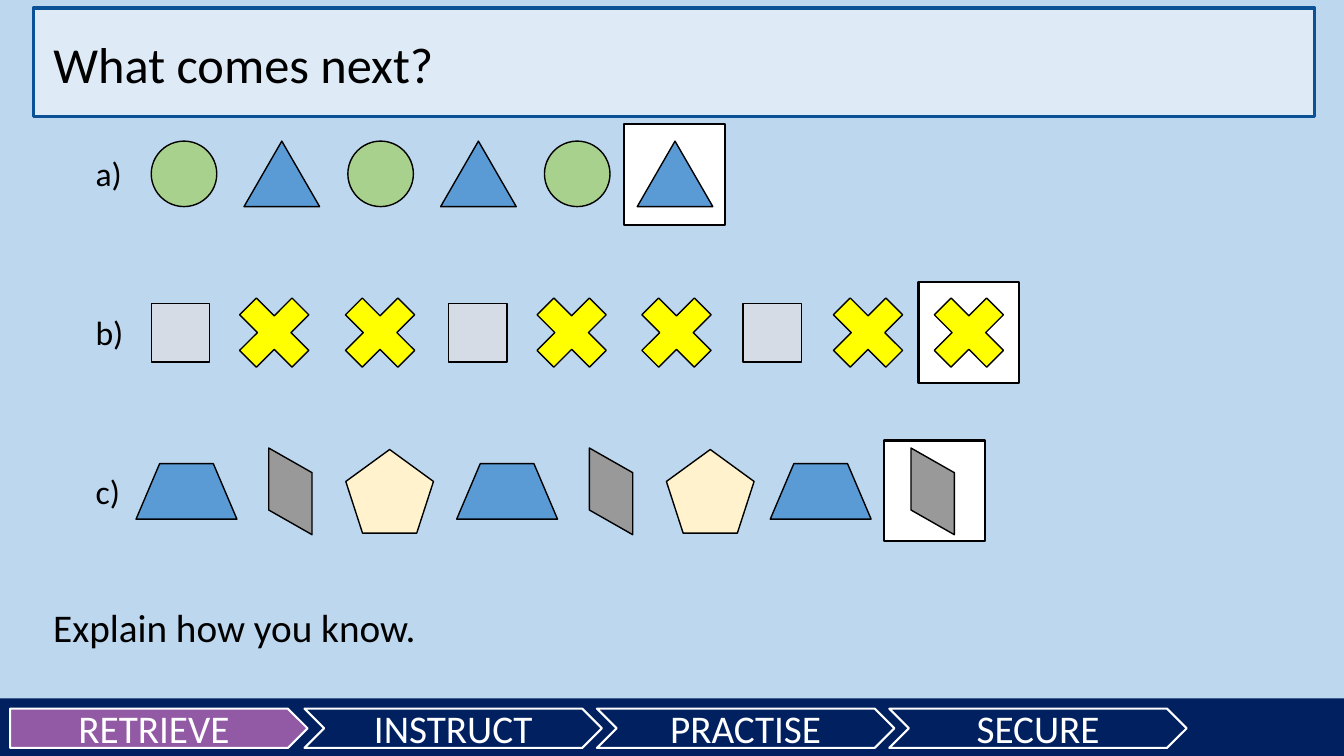
from pptx import Presentation
from pptx.dml.color import RGBColor
from pptx.enum.shapes import MSO_SHAPE
from pptx.enum.text import MSO_ANCHOR, MSO_AUTO_SIZE, PP_ALIGN
from pptx.util import Inches, Pt

SKY = RGBColor(0xBD, 0xD7, 0xEE)
PALE = RGBColor(0xDE, 0xEB, 0xF7)
EDGE = RGBColor(0x0B, 0x51, 0x96)
NAVY = RGBColor(0x00, 0x20, 0x60)
PURPLE = RGBColor(0x92, 0x59, 0xA4)
WHITE = RGBColor(0xFF, 0xFF, 0xFF)
BLACK = RGBColor(0x00, 0x00, 0x00)
GREEN = RGBColor(0xA9, 0xD1, 0x8E)
BLUE = RGBColor(0x5B, 0x9B, 0xD5)
SILVER = RGBColor(0xD6, 0xDC, 0xE5)
YELLOW = RGBColor(0xFF, 0xFF, 0x00)
GREY = RGBColor(0x99, 0x99, 0x99)
CREAM = RGBColor(0xFF, 0xF2, 0xCC)

# Pattern pieces: preset, fill, width, height, rotation, adjustment
CIRCLE = (MSO_SHAPE.OVAL, GREEN, 0.65, 0.65, 0, None)
TRIANGLE = (MSO_SHAPE.ISOSCELES_TRIANGLE, BLUE, 0.75, 0.65, 0, None)
SQUARE = (MSO_SHAPE.RECTANGLE, SILVER, 0.58, 0.58, 0, None)
CROSS = (MSO_SHAPE.MATH_MULTIPLY, YELLOW, 1, 1, 0, None)
TRAPEZE = (MSO_SHAPE.TRAPEZOID, BLUE, 1, 0.55, 0, 0.425)
SLANT = (MSO_SHAPE.PARALLELOGRAM, GREY, 0.86, 0.43, 90, 0.569)
PENTAGON = (MSO_SHAPE.REGULAR_PENTAGON, CREAM, 0.87, 0.83, 0, None)

# Rows: label, label top, answer box, cycle of (piece, top), lefts
ROWS = [
    ("a)", 1.47, (6.19, 1.23), [(CIRCLE, 1.4), (TRIANGLE, 1.4)],
     [1.5, 2.42, 3.45, 4.37, 5.4, 6.32]),
    ("b)", 3.05, (9.11, 2.8), [(SQUARE, 3.01), (CROSS, 2.8), (CROSS, 2.8)],
     [1.5, 2.22, 3.27, 4.45, 5.17, 6.21, 7.37, 8.11, 9.11]),
    ("c)", 4.62, (8.77, 4.37),
     [(TRAPEZE, 4.6), (SLANT, 4.66), (PENTAGON, 4.46)],
     [1.35, 2.45, 3.43, 4.53, 5.63, 6.61, 7.64, 8.82]),
]

STEPS = [("RETRIEVE", 0.1), ("INSTRUCT", 3.02),
         ("PRACTISE", 5.92), ("SECURE", 8.82)]


def add_block(slide, preset, left, top, width, height, fill, line, weight):
    block = slide.shapes.add_shape(
        preset, Inches(left), Inches(top), Inches(width), Inches(height))
    block.shadow.inherit = False
    block.fill.solid()
    block.fill.fore_color.rgb = fill
    if line is None:
        block.line.fill.background()
    else:
        block.line.color.rgb = line
        block.line.width = Pt(weight)
    return block


def set_text(shape, text, size, color=BLACK, align=PP_ALIGN.LEFT):
    shape.text_frame.text = text
    para = shape.text_frame.paragraphs[0]
    para.alignment = align
    para.font.name = "Calibri"
    para.font.size = Pt(size)
    para.font.color.rgb = color


def add_label(slide, text, left, top, width, height, size):
    box = slide.shapes.add_textbox(
        Inches(left), Inches(top), Inches(width), Inches(height))
    box.text_frame.word_wrap = True
    box.text_frame.auto_size = MSO_AUTO_SIZE.SHAPE_TO_FIT_TEXT
    set_text(box, text, size)


def add_title(slide, text):
    title = slide.shapes.title
    title.left, title.top = Inches(0.43), Inches(0.28)
    title.width, title.height = Inches(5.2), Inches(0.71)
    title.text_frame.word_wrap = True
    title.text_frame.auto_size = MSO_AUTO_SIZE.SHAPE_TO_FIT_TEXT
    title.text_frame.vertical_anchor = MSO_ANCHOR.TOP
    set_text(title, text, 36)
    # Bring the title in front of its panel
    title.element.getparent().append(title.element)


def add_steps(slide):
    for i, (name, left) in enumerate(STEPS):
        preset = MSO_SHAPE.CHEVRON if i else MSO_SHAPE.PENTAGON
        step = add_block(slide, preset, left, 7.03, 2.95, 0.39,
                         NAVY if i else PURPLE, WHITE, 1.5)
        step.text_frame.vertical_anchor = MSO_ANCHOR.MIDDLE
        set_text(step, name, 28, WHITE, PP_ALIGN.CENTER)


def add_row(slide, label, top, answer, cycle, lefts):
    add_block(slide, MSO_SHAPE.RECTANGLE, *answer, 1, 1, WHITE, BLACK, 1.5)
    add_label(slide, label, 0.85, top, 0.65, 0.5, 24)
    for i, left in enumerate(lefts):
        piece, y = cycle[i % len(cycle)]
        preset, fill, width, height, turn, adjust = piece
        block = add_block(slide, preset, left, y, width, height,
                          fill, BLACK, 1)
        block.rotation = turn
        if adjust is not None:
            block.adjustments[0] = adjust


def main():
    deck = Presentation()
    deck.slide_width, deck.slide_height = Inches(13.33), Inches(7.5)
    slide = deck.slides.add_slide(deck.slide_layouts[5])
    slide.background.fill.solid()
    slide.background.fill.fore_color.rgb = SKY

    # Title panel and footer
    add_block(slide, MSO_SHAPE.RECTANGLE, 0.33, 0.08, 12.71, 1.08,
              PALE, EDGE, 2.25)
    add_block(slide, MSO_SHAPE.RECTANGLE, 0, 6.93, 13.33, 0.57,
              NAVY, None, 0)
    add_steps(slide)
    add_title(slide, "What comes next?")

    # Patterns and prompt
    for row in ROWS:
        add_row(slide, *row)
    add_label(slide, "Explain how you know.", 0.43, 5.94, 5.2, 0.57, 28)

    deck.save("out.pptx")


if __name__ == "__main__":
    main()
